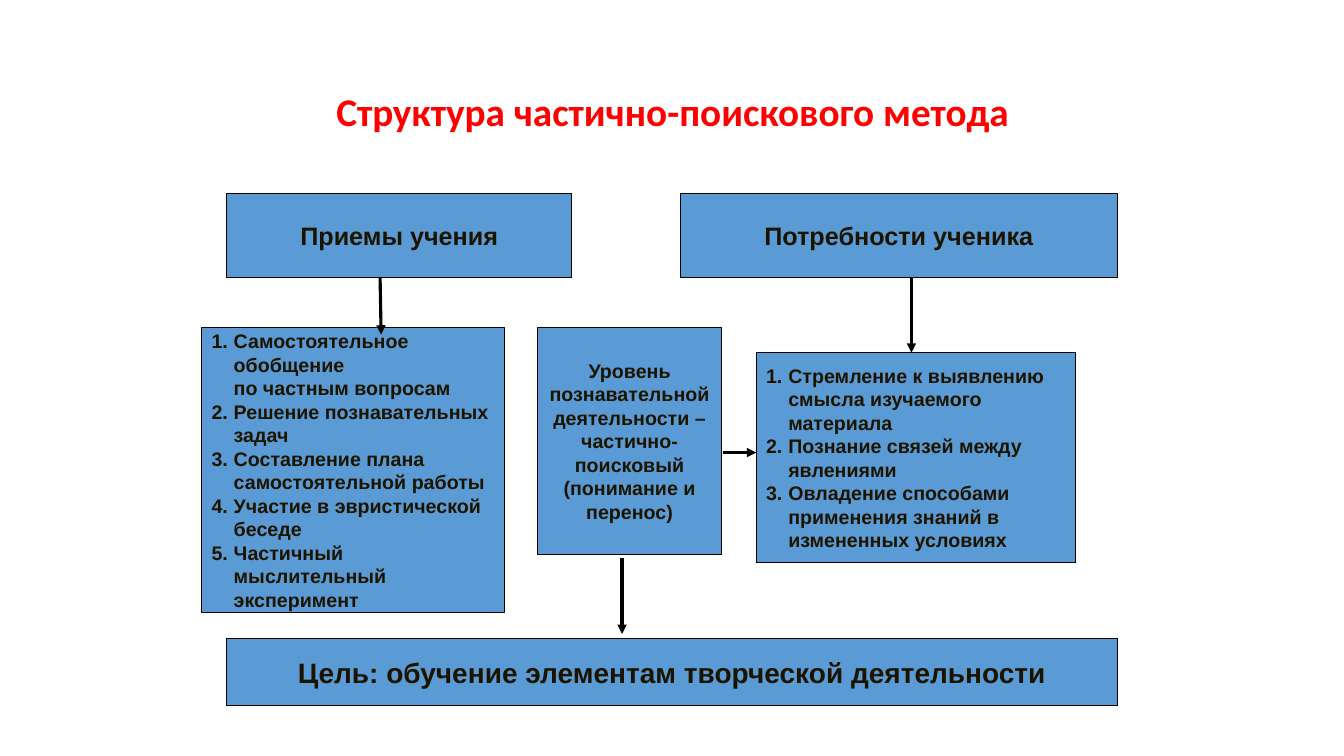
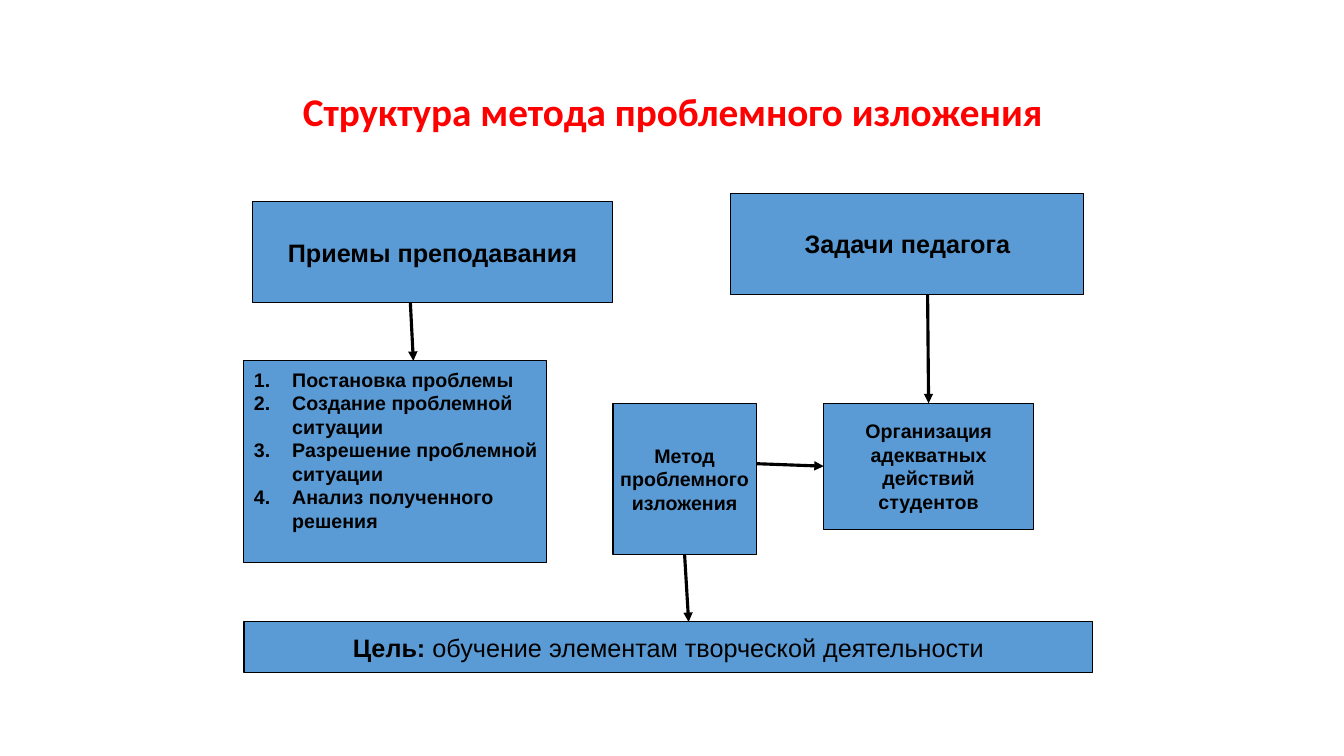
from dataclasses import dataclass

from lxml.etree import SubElement
from pptx import Presentation
from pptx.dml.color import RGBColor
from pptx.enum.shapes import MSO_CONNECTOR, MSO_SHAPE
from pptx.enum.text import MSO_ANCHOR, PP_ALIGN
from pptx.oxml.ns import qn
from pptx.util import Inches, Pt


@dataclass(frozen=True)
class Theme:
    title: str = "FF0000"
    fill: str = "5B9BD5"
    line: str = "000000"
    head_font: str = "Calibri"
    font: str = "Arial"
    head: int = 28
    goal: int = 20
    label: int = 18
    body: int = 14
    edge: float = 0.75
    arrow: float = 2.25


THEME = Theme()
TOP, LEFT, BOTTOM, RIGHT = range(4)
TITLE_AT = (0.92, 0.4, 11.5, 1.45)

# Boxes: name -> (left, top, width, height), text, format.
# A tuple of texts is a numbered list; "\v" breaks a line.
# Arrow ends: an (x, y) point, or a (box name, side) joint.
SLIDES = [
    {
        "title": "Структура частично-поискового метода",
        "ink": "1A1300",
        "boxes": {
            "ways": ((2.25, 1.92, 3.42, 0.83), "Приемы учения", {"size": THEME.label}),
            "needs": ((6.75, 1.92, 4.33, 0.83), "Потребности ученика", {"size": THEME.label}),
            "way list": ((2, 3.25, 3, 2.83), (
                "Самостоятельное\vобобщение\vпо частным вопросам",
                "Решение познавательных\vзадач",
                "Составление плана\vсамостоятельной работы",
                "Участие в эвристической\vбеседе",
                "Частичный\vмыслительный\vэксперимент",
            ), {"hang": 0.22}),
            "level": (
                (5.33, 3.25, 1.83, 2.25),
                "Уровень\vпознавательной\vдеятельности –\vчастично-\v"
                "поисковый\v(понимание и\vперенос)",
                {},
            ),
            "need list": ((7.5, 3.5, 3.17, 2.08), (
                "Стремление к выявлению\vсмысла изучаемого\vматериала",
                "Познание связей между\vявлениями",
                "Овладение способами\vприменения знаний в\vизмененных условиях",
            ), {"hang": 0.22}),
            "goal": (
                (2.25, 6.33, 8.83, 0.67),
                "Цель: обучение элементам творческой деятельности",
                {"size": THEME.goal},
            ),
        },
        "arrows": [
            ((9.04, 2.75), (9.04, 3.5)),
            ((7.17, 4.49), (7.5, 4.49)),
            ((6.17, 5.54), (6.17, 6.29)),
            ((3.77, 2.75), (3.78, 3.32)),
        ],
    },
    {
        "title": "Структура метода проблемного изложения",
        "ink": "000000",
        "boxes": {
            "ways": ((2.5, 2, 3.58, 1), "Приемы преподавания", {"size": THEME.label}),
            "tasks": ((7.25, 1.92, 3.5, 1), "Задачи педагога", {"size": THEME.label}),
            "way list": ((2.42, 3.58, 3, 2), (
                "Постановка проблемы",
                "Создание проблемной\vситуации",
                "Разрешение проблемной\vситуации",
                "Анализ полученного\vрешения",
            ), {"hang": 0.38, "foot": 0.28}),
            "method": ((6.08, 4, 1.42, 1.5), "Метод\vпроблемного\vизложения", {}),
            "acts": (
                (8.17, 4, 2.08, 1.25),
                "Организация\vадекватных\vдействий\vстудентов",
                {},
            ),
            "goal": (
                (2.42, 6.17, 8.42, 0.5),
                "Цель: ",
                {"size": THEME.label, "tail": "обучение элементам творческой деятельности"},
            ),
        },
        "arrows": [
            ((4.07, 3), (4.1, 3.58)),
            ((9.2, 2.92), ("acts", TOP)),
            ((7.5, 4.6), ("acts", LEFT)),
            (("method", BOTTOM), (6.83, 6.17)),
        ],
    },
]


def inch(nums):
    return [Inches(n) for n in nums]


def number(par, start, hang):
    """Give a paragraph a number and a hanging indent."""
    props = par._p.get_or_add_pPr()
    props.set("marL", str(Inches(hang)))
    props.set("indent", str(-Inches(hang)))
    mark = SubElement(props, qn("a:buAutoNum"), type="arabicPeriod")
    mark.set("startAt", str(start))


def write(shape, text, *, ink, size=THEME.body, font=THEME.font, hang=0,
          tail="", foot=0.05, wrap=False, space=None):
    """Fill a shape with bold text; tail follows it in regular weight."""
    frame = shape.text_frame
    frame.word_wrap = wrap
    frame.vertical_anchor = MSO_ANCHOR.MIDDLE
    frame.margin_bottom = Inches(foot)
    items = text if isinstance(text, tuple) else (text,)
    for pos, item in enumerate(items, 1):
        par = frame.paragraphs[0] if pos == 1 else frame.add_paragraph()
        par.text = item
        par.alignment = PP_ALIGN.LEFT if hang else PP_ALIGN.CENTER
        par.line_spacing = space
        if hang:
            number(par, pos, hang)
        for run in par.runs:
            run.font.bold = True
        if tail:
            par.add_run().text = tail
        for run in par.runs:
            run.font.name = font
            run.font.size = Pt(size)
            run.font.color.rgb = RGBColor.from_string(ink)
        for gap in par._p.findall(qn("a:br")):
            SubElement(gap, qn("a:rPr"), sz=str(size * 100))


def stroke(line, width):
    line.color.rgb = RGBColor.from_string(THEME.line)
    line.width = Pt(width)


def add_box(slide, place, text, ink, style):
    box = slide.shapes.add_shape(MSO_SHAPE.RECTANGLE, *inch(place))
    box.shadow.inherit = False
    box.fill.solid()
    box.fill.fore_color.rgb = RGBColor.from_string(THEME.fill)
    stroke(box.line, THEME.edge)
    write(box, text, ink=ink, **style)
    return box


def add_arrow(slide, boxes, start, end):
    points = [(0, 0) if p[0] in boxes else p for p in (start, end)]
    link = slide.shapes.add_connector(
        MSO_CONNECTOR.STRAIGHT, *inch(points[0] + points[1]))
    for spot, join in ((start, link.begin_connect), (end, link.end_connect)):
        if spot[0] in boxes:
            join(boxes[spot[0]], spot[1])
    stroke(link.line, THEME.arrow)
    SubElement(link.line._get_or_add_ln(), qn("a:tailEnd"), type="triangle")
    SubElement(link._element.spPr, qn("a:effectLst"))


def add_slide(deck, data):
    slide = deck.slides.add_slide(deck.slide_layouts[6])
    title = slide.shapes.add_textbox(*inch(TITLE_AT))
    write(title, data["title"], ink=THEME.title, size=THEME.head,
          font=THEME.head_font, wrap=True, space=0.9)
    boxes = {
        name: add_box(slide, place, text, data["ink"], style)
        for name, (place, text, style) in data["boxes"].items()
    }
    for start, end in data["arrows"]:
        add_arrow(slide, boxes, start, end)


def main():
    deck = Presentation()
    deck.slide_width, deck.slide_height = inch((13.33, 7.5))
    for data in SLIDES:
        add_slide(deck, data)
    deck.save("out.pptx")


if __name__ == "__main__":
    main()
